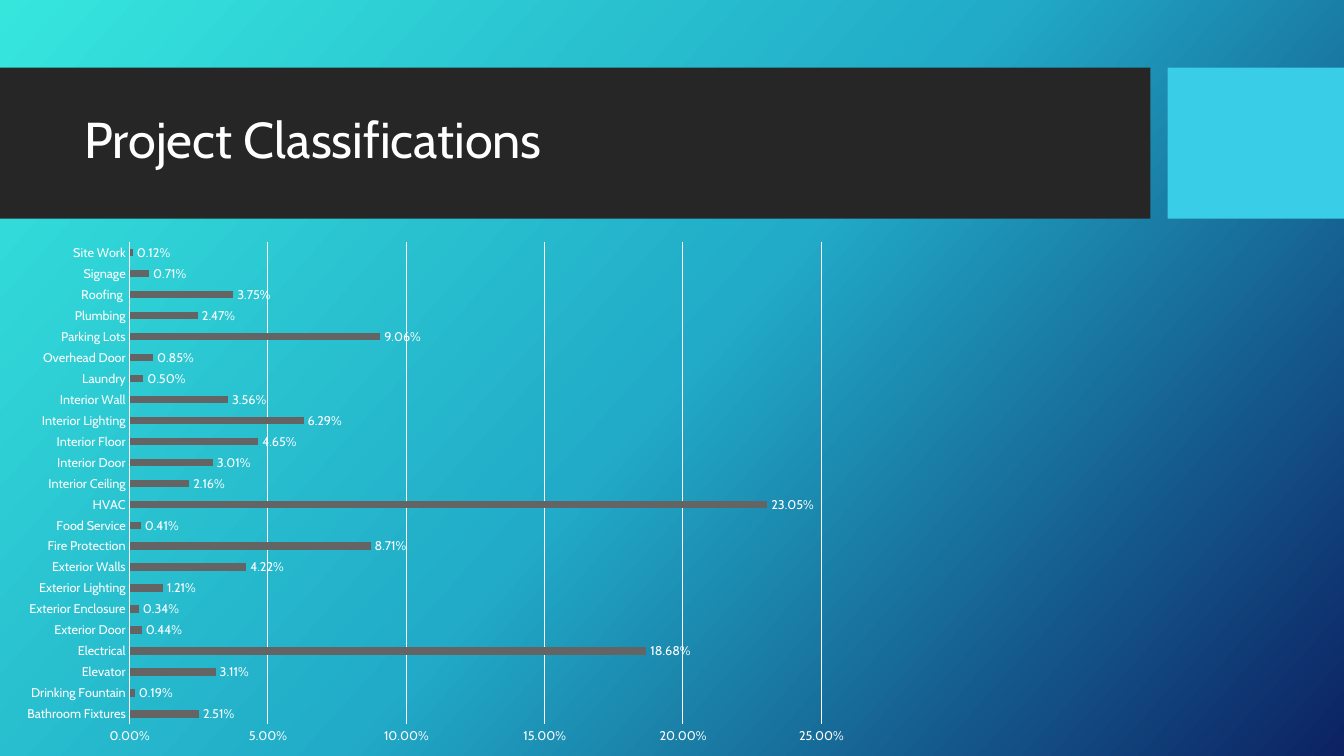
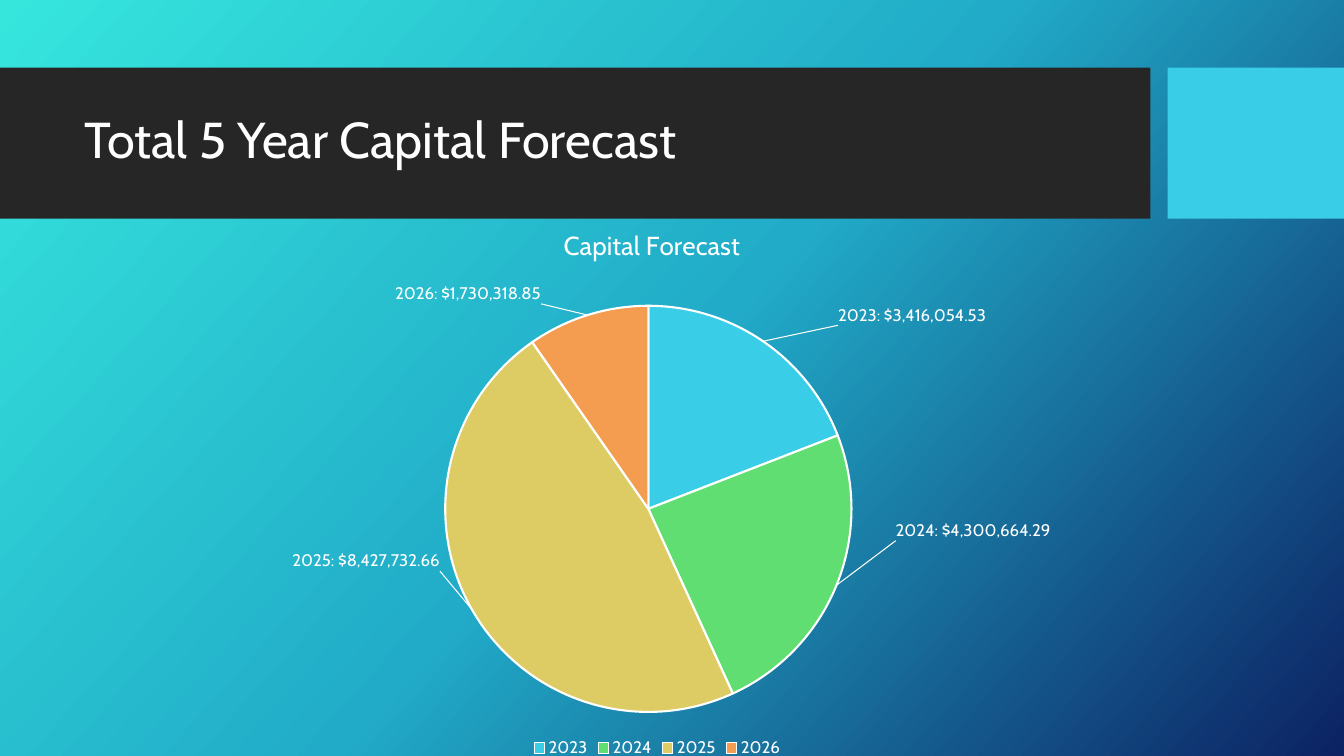
import copy
import lxml.etree
import pptx
import pptx.chart.data
import pptx.dml.color
import pptx.enum.chart
import pptx.enum.shapes
import pptx.enum.text
import pptx.oxml.ns
import pptx.util

Inches = pptx.util.Inches
Pt = pptx.util.Pt
qn = pptx.oxml.ns.qn


def rgb(code):
    return pptx.dml.color.RGBColor.from_string(code)


class Theme:
    face = "Cabin"
    white = "FFFFFF"
    band = "262626"
    tile = "39CDE7"
    bar = "646464"
    wedges = ("39CDE7", "60DE72", "DDCC64", "F49D50")
    back = ((0, "36E6DD"), (0.5, "21ABC8"), (1, "0C2263"))
    angle = 42
    head, name, label, base, small = 36, 18.6, 12, 10, 9


def place(node, index, inner=False, **box):
    """Give a chart part a manual layout, in fractions of the chart."""
    for old in node.findall(qn("c:layout")):
        node.remove(old)
    layout = lxml.etree.Element(qn("c:layout"))
    manual = lxml.etree.SubElement(layout, qn("c:manualLayout"))
    if inner:
        box = {"layoutTarget": "inner", **box}
    for tag, value in box.items():
        lxml.etree.SubElement(manual, qn("c:" + tag)).set("val", str(value))
    node.insert(index, layout)


class Deck:
    def __init__(self, theme):
        self.theme = theme
        self.file = pptx.Presentation()
        self.file.slide_width = Inches(13.33)
        self.file.slide_height = Inches(7.5)
        self.slide = None

    def style(self, font, size):
        font.name = self.theme.face
        font.size = Pt(size)
        font.bold = False
        font.color.rgb = rgb(self.theme.white)

    def stroke(self, line, width=0.75):
        line.color.rgb = rgb(self.theme.white)
        line.width = Pt(width)

    def page(self, title):
        self.slide = self.file.slides.add_slide(self.file.slide_layouts[6])
        self.shade()
        self.block(0, 11.41, self.theme.band)
        self.block(11.58, 1.75, self.theme.tile)
        self.title(title)

    def shade(self):
        fill = self.slide.background.fill
        fill.gradient()
        fill.gradient_angle = 360 - self.theme.angle
        stops = self.slide.element.xpath(".//a:gsLst")[0]
        stops.insert(1, copy.deepcopy(stops[0]))
        for stop, (spot, color) in zip(fill.gradient_stops, self.theme.back):
            stop.position = spot
            stop.color.rgb = rgb(color)

    def block(self, left, width, color):
        shape = self.slide.shapes.add_shape(
            pptx.enum.shapes.MSO_SHAPE.RECTANGLE,
            Inches(left), Inches(0.67), Inches(width), Inches(1.5))
        shape.shadow.inherit = False
        shape.fill.solid()
        shape.fill.fore_color.rgb = rgb(color)
        shape.line.fill.background()

    def title(self, text):
        frame = self.slide.shapes.add_textbox(
            Inches(0.74), Inches(0.82), Inches(10.51), Inches(1.18)).text_frame
        frame.word_wrap = True
        frame.vertical_anchor = pptx.enum.text.MSO_ANCHOR.MIDDLE
        frame.text = text
        para = frame.paragraphs[0]
        para.line_spacing = 0.9
        self.style(para.runs[0].font, self.theme.head)

    def chart(self, kind, box, rows, plot, form):
        data = pptx.chart.data.CategoryChartData(number_format=form)
        data.categories = [row[0] for row in rows]
        data.add_series("Series 1", [row[1] for row in rows])
        chart = self.slide.shapes.add_chart(
            kind, *(Inches(side) for side in box), data).chart
        self.style(chart.font, self.theme.base)
        # Let the slide background show through
        clear = lxml.etree.Element(qn("c:spPr"))
        lxml.etree.SubElement(clear, qn("a:noFill"))
        edge = lxml.etree.SubElement(clear, qn("a:ln"))
        lxml.etree.SubElement(edge, qn("a:noFill"))
        chart.element.find(qn("c:txPr")).addprevious(clear)
        area = chart.element.xpath(".//c:plotArea")[0]
        place(area, 0, inner=True, xMode="edge", yMode="edge", **plot)
        return chart

    def tags(self, series, form, spot, size):
        labels = series.data_labels
        labels.show_value = True
        labels.number_format = form
        labels.number_format_is_linked = False
        labels.position = spot
        self.style(labels.font, size)

    def bars(self, box, rows, plot):
        form = "0.00%"
        chart = self.chart(pptx.enum.chart.XL_CHART_TYPE.BAR_CLUSTERED,
                           box, rows, plot, form)
        chart.has_title = False
        chart.has_legend = False
        body = chart.plots[0]
        body.gap_width = 182
        body.vary_by_categories = False
        fill = body.series[0].format.fill
        fill.solid()
        fill.fore_color.rgb = rgb(self.theme.bar)
        self.tags(body.series[0], form,
                  pptx.enum.chart.XL_LABEL_POSITION.OUTSIDE_END,
                  self.theme.small)

        # Axes
        for axis in (chart.category_axis, chart.value_axis):
            axis.major_tick_mark = pptx.enum.chart.XL_TICK_MARK.NONE
            axis.minor_tick_mark = pptx.enum.chart.XL_TICK_MARK.NONE
            self.style(axis.tick_labels.font, self.theme.small)
        self.stroke(chart.category_axis.format.line)
        scale = chart.value_axis
        scale.minimum_scale, scale.maximum_scale = 0, 0.25
        scale.major_unit = 0.05
        scale.has_major_gridlines = True
        self.stroke(scale.major_gridlines.format.line)
        scale.format.line.fill.background()
        scale.tick_labels.number_format = form
        scale.tick_labels.number_format_is_linked = False

    def pie(self, box, title, rows, plot, shifts):
        form = "$#,##0.00"
        chart = self.chart(pptx.enum.chart.XL_CHART_TYPE.PIE,
                           box, rows, plot, form)
        chart.has_title = True
        head = chart.chart_title
        head.text_frame.text = title
        self.style(head.text_frame.paragraphs[0].runs[0].font, self.theme.name)
        head.include_in_layout = False
        place(head.element, 1, xMode="edge", yMode="edge", x=0.39, y=0.03)
        chart.has_legend = True
        chart.legend.position = pptx.enum.chart.XL_LEGEND_POSITION.BOTTOM
        chart.legend.include_in_layout = False
        self.style(chart.legend.font, self.theme.label)

        # Wedges and their labels
        chart.plots[0].vary_by_categories = True
        series = chart.plots[0].series[0]
        self.tags(series, form, pptx.enum.chart.XL_LABEL_POSITION.BEST_FIT,
                  self.theme.label)
        for i, (year, value) in enumerate(rows):
            wedge = series.points[i]
            wedge.format.fill.solid()
            wedge.format.fill.fore_color.rgb = rgb(self.theme.wedges[i])
            self.stroke(wedge.format.line, 1.5)
            label = wedge.data_label
            frame = label.text_frame
            frame.text = f"{year}: ${value:,.2f}"
            frame.word_wrap = False
            self.style(frame.paragraphs[0].runs[0].font, self.theme.label)
            label.position = pptx.enum.chart.XL_LABEL_POSITION.OUTSIDE_END
        for node, (x, y) in zip(chart.element.xpath(".//c:dLbl"), shifts):
            place(node, 1, x=x, y=y)

        # Leader lines
        group = chart.element.xpath(".//c:ser/c:dLbls")[0]
        lead = lxml.etree.SubElement(group, qn("c:leaderLines"))
        look = lxml.etree.SubElement(lead, qn("c:spPr"))
        line = lxml.etree.SubElement(look, qn("a:ln"), w=str(Pt(0.75)))
        paint = lxml.etree.SubElement(line, qn("a:solidFill"))
        lxml.etree.SubElement(paint, qn("a:srgbClr"), val=self.theme.white)


SHARES = (
    ("Bathroom Fixtures", 0.0251), ("Drinking Fountain", 0.0019),
    ("Elevator", 0.0311), ("Electrical", 0.1868), ("Exterior Door", 0.0044),
    ("Exterior Enclosure", 0.0034), ("Exterior Lighting", 0.0121),
    ("Exterior Walls", 0.0422), ("Fire Protection", 0.0871),
    ("Food Service", 0.0041), ("HVAC", 0.2305), ("Interior Ceiling", 0.0216),
    ("Interior Door", 0.0301), ("Interior Floor", 0.0465),
    ("Interior Lighting", 0.0629), ("Interior Wall", 0.0356),
    ("Laundry", 0.005), ("Overhead Door", 0.0085), ("Parking Lots", 0.0906),
    ("Plumbing", 0.0247), ("Roofing ", 0.0375), ("Signage", 0.0071),
    ("Site Work", 0.0012),
)
COSTS = (("2023", 3416054.53), ("2024", 4300664.29),
         ("2025", 8427732.66), ("2026", 1730318.85))


def main():
    deck = Deck(Theme)

    # Project shares
    deck.page("Project Classifications")
    deck.bars((0.1, 2.3, 8.47, 5.2), SHARES,
              {"x": 0.14, "y": 0.02, "w": 0.81, "h": 0.92})

    # Yearly costs
    deck.page("Total 5 Year Capital Forecast")
    deck.pie((2.08, 2.04, 8.88, 5.52), "Capital Forecast", COSTS,
             {"x": 0.26, "y": 0.18, "w": 0.46, "h": 0.73},
             ((0.08, -0.02), (0.06, -0.12), (-0.03, -0.11), (-0.05, -0.01)))

    deck.file.save("out.pptx")


if __name__ == "__main__":
    main()
